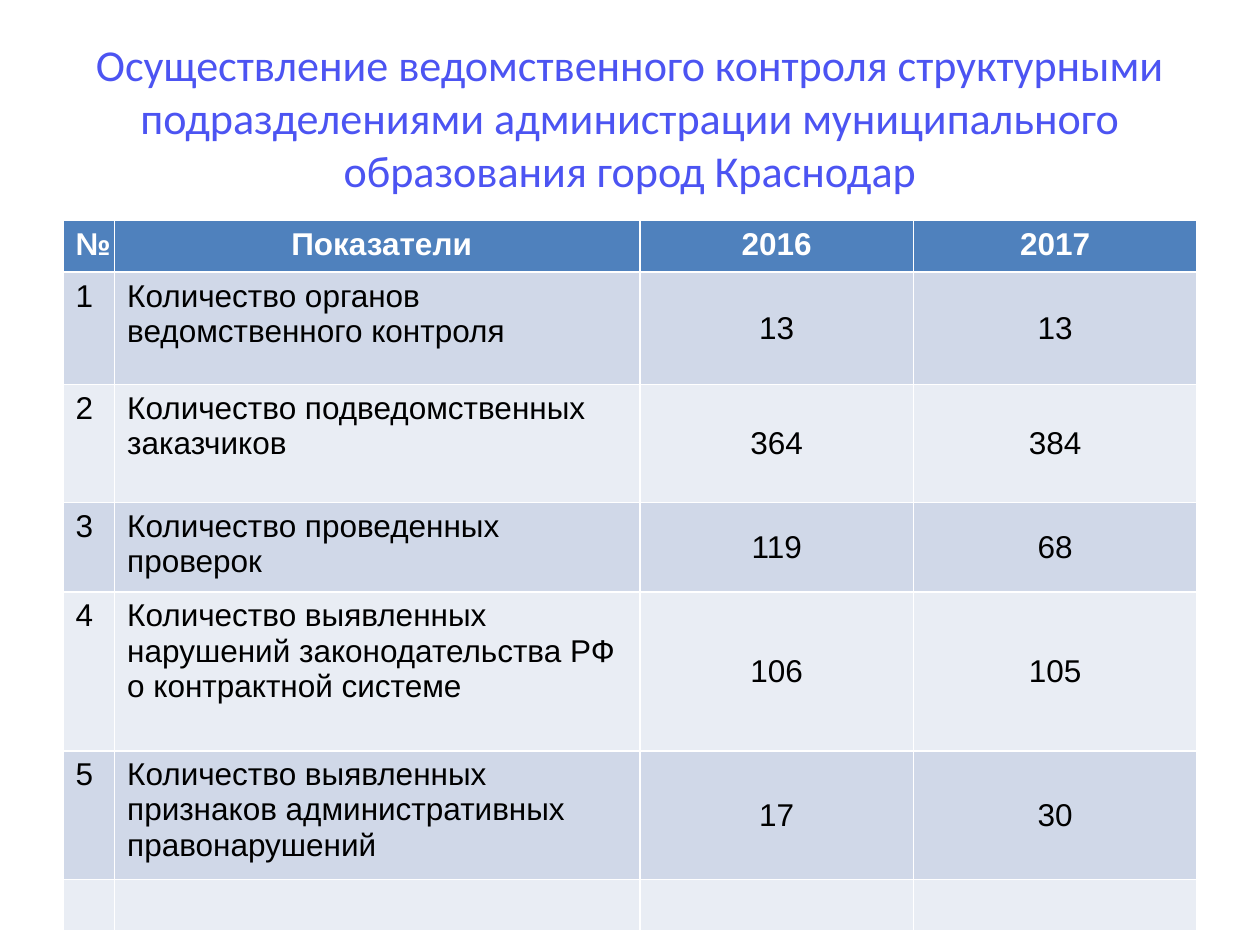
from pptx import Presentation
from pptx.dml.color import RGBColor
from pptx.enum.text import MSO_ANCHOR, MSO_AUTO_SIZE, PP_ALIGN
from pptx.util import Inches, Pt

COLORS = {
    "title": "4C54F2",
    "header": "4F81BD",
    "header_text": "FFFFFF",
    "odd_row": "D0D8E8",
    "even_row": "E9EDF4",
    "text": "000000",
}
TITLE = ("Осуществление ведомственного контроля структурными подразделениями "
         "администрации муниципального образования город Краснодар")
INDICATORS = [
    ("№", " Показатели", "2016", "2017"),
    ("1", "Количество органов ведомственного контроля", "13", "13"),
    ("2", "Количество подведомственных заказчиков", "364", "384"),
    ("3", "Количество проведенных проверок", "119", "68"),
    ("4", "Количество выявленных нарушений законодательства РФ о контрактной системе",
     "106", "105"),
    ("5", "Количество выявленных признаков административных правонарушений", "17", "30"),
    ("", "", "", ""),
]
COLUMN_WIDTHS = [0.41, 4.17, 2.17, 2.25]
ROW_HEIGHTS = [0.41, 0.89, 0.94, 0.71, 1.26, 1.02, 0.41]
MARGIN = 0.5


def style_paragraph(paragraph, font_name, size, color, bold=False, align=PP_ALIGN.LEFT):
    paragraph.alignment = align
    for run in paragraph.runs:
        run.font.name = font_name
        run.font.size = Pt(size)
        run.font.bold = bold
        run.font.color.rgb = RGBColor.from_string(COLORS[color])


def add_title(slide):
    heading = slide.shapes.title
    heading.left, heading.top = Inches(MARGIN), Inches(0.3)
    heading.width, heading.height = Inches(sum(COLUMN_WIDTHS)), Inches(1.25)
    frame = heading.text_frame
    frame.text = TITLE
    frame.auto_size = MSO_AUTO_SIZE.NONE
    frame.vertical_anchor = MSO_ANCHOR.MIDDLE
    style_paragraph(frame.paragraphs[0], "Calibri", 25.2, "title", align=PP_ALIGN.CENTER)


def fill_cell(cell, text, row, column):
    is_header = row == 0
    is_year = column >= 2
    band = "header" if is_header else "odd_row" if row % 2 else "even_row"
    cell.fill.solid()
    cell.fill.fore_color.rgb = RGBColor.from_string(COLORS[band])
    cell.text_frame.text = text
    if is_year and not is_header:
        cell.vertical_anchor = MSO_ANCHOR.MIDDLE
    centred = is_year or (is_header and column == 1)
    style_paragraph(
        cell.text_frame.paragraphs[0], "Arial", 18,
        "header_text" if is_header else "text", bold=is_header,
        align=PP_ALIGN.CENTER if centred else PP_ALIGN.LEFT)


def add_indicator_table(slide):
    table = slide.shapes.add_table(
        len(ROW_HEIGHTS), len(COLUMN_WIDTHS), Inches(MARGIN), Inches(1.75),
        Inches(sum(COLUMN_WIDTHS)), Inches(sum(ROW_HEIGHTS))).table
    for column, width in zip(table.columns, COLUMN_WIDTHS):
        column.width = Inches(width)
    for row, height in zip(table.rows, ROW_HEIGHTS):
        row.height = Inches(height)
    for row, record in enumerate(INDICATORS):
        for column, text in enumerate(record):
            fill_cell(table.cell(row, column), text, row, column)


def main():
    """Build the slide on departmental control indicators."""
    presentation = Presentation()
    presentation.slide_width, presentation.slide_height = Inches(10), Inches(7.5)
    slide = presentation.slides.add_slide(presentation.slide_layouts[5])
    add_title(slide)
    add_indicator_table(slide)
    presentation.save("out.pptx")


if __name__ == "__main__":
    main()
